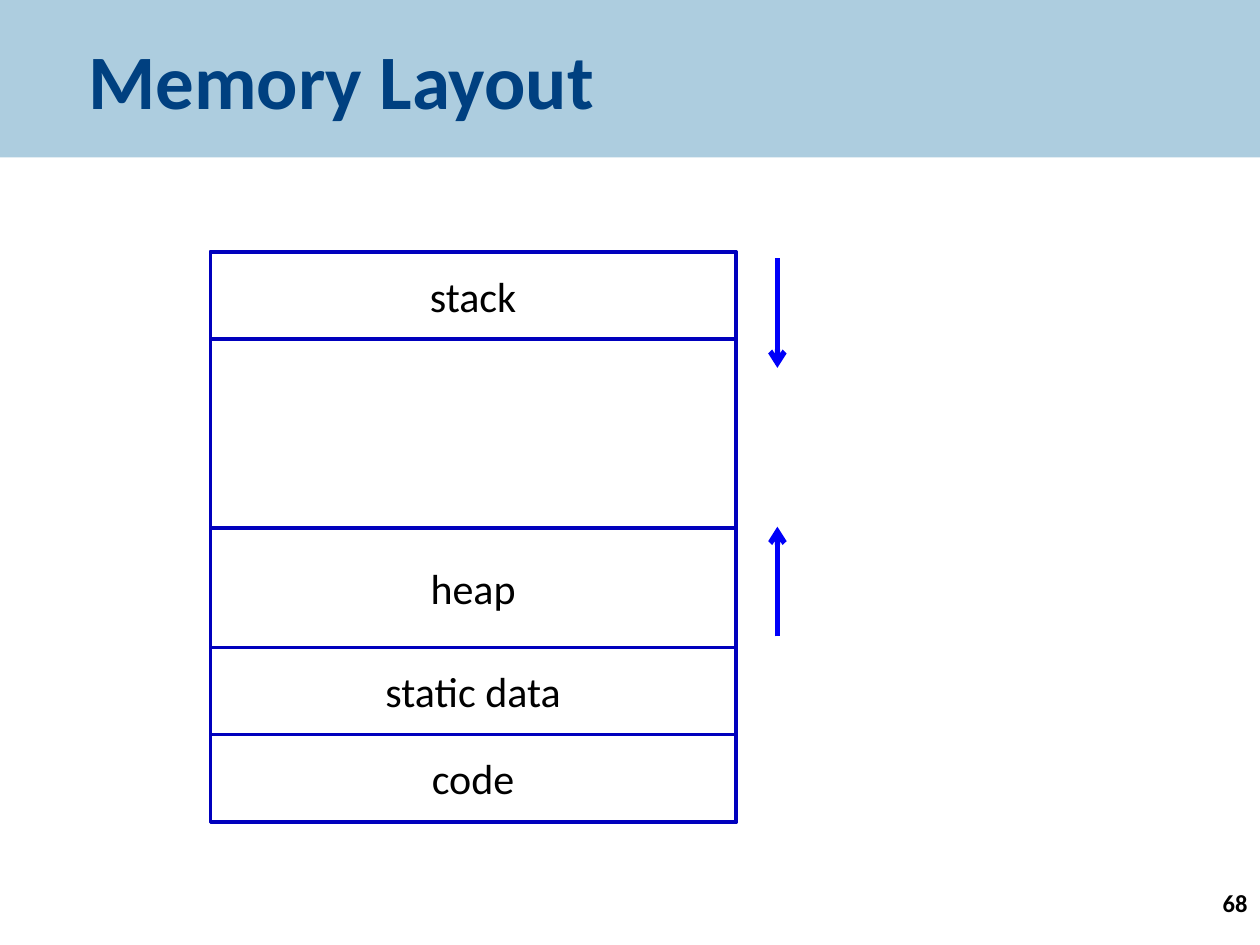
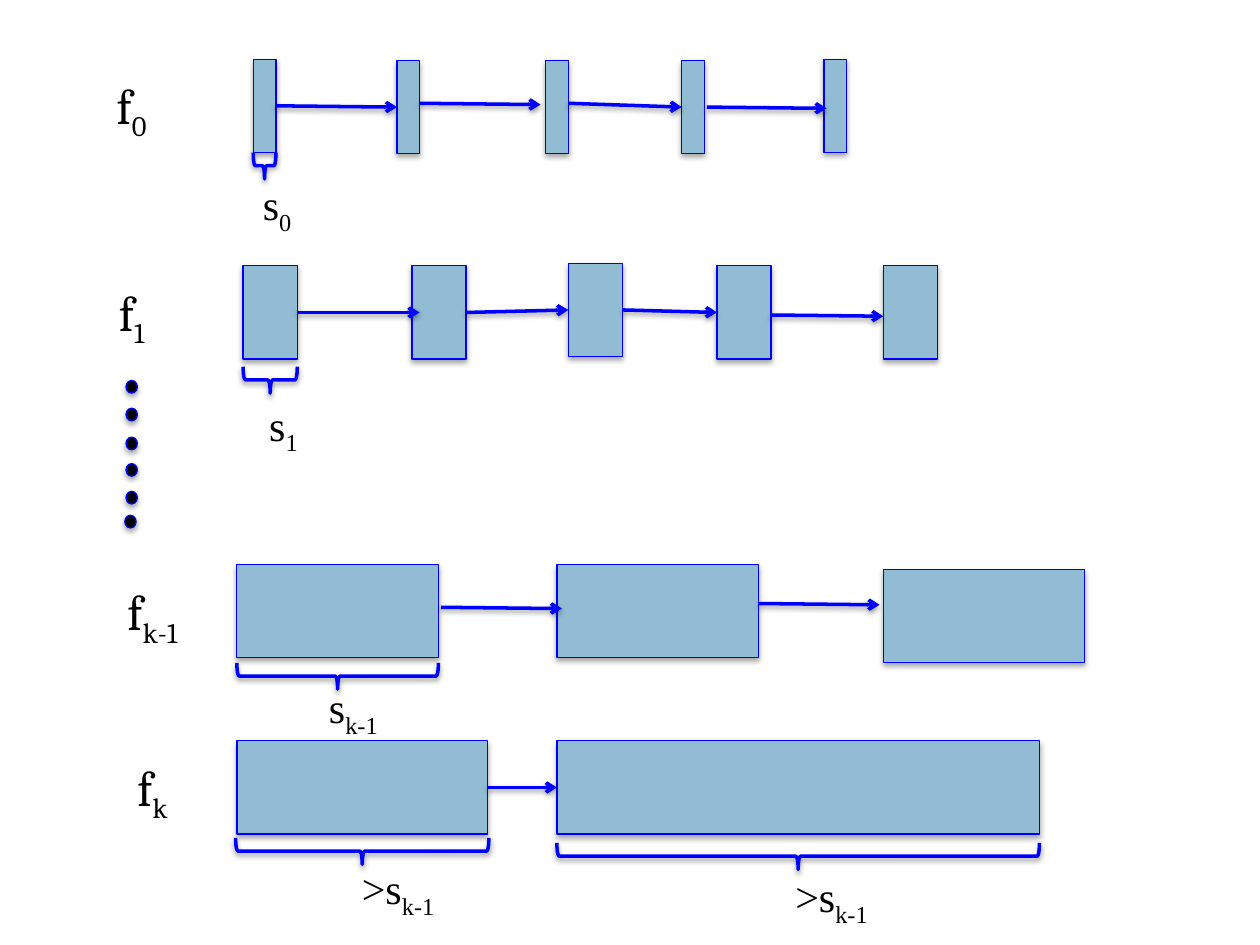
from lxml import etree
from pptx import Presentation
from pptx import util as u
from pptx.dml.color import RGBColor
from pptx.enum import shapes, text
from pptx.oxml.ns import qn

PX = 9144  # 100 px to the inch
FRAME_BLUE = RGBColor(0x00, 0x00, 0xBD)
EDGE_BLUE = RGBColor(0x00, 0x00, 0xF9)
ARROW_BLUE = RGBColor(0x00, 0x00, 0xFF)
BLOCK_BLUE = RGBColor(0x91, 0xBC, 0xD4)
BAND_BLUE = RGBColor(0xAD, 0xCD, 0xDF)
TITLE_BLUE = RGBColor(0x00, 0x40, 0x80)
BLACK = RGBColor(0, 0, 0)
KIND = shapes.MSO_SHAPE


def add_arrow(page, start, end, colour, width):
    arrow = page.shapes.add_connector(
        shapes.MSO_CONNECTOR.STRAIGHT, *[value * PX for value in (*start, *end)])
    arrow.line.color.rgb = colour
    arrow.line.width = u.Pt(width)
    etree.SubElement(arrow.line._get_or_add_ln(), qn("a:tailEnd"), type="arrow")
    etree.SubElement(arrow._element.spPr, qn("a:effectLst"))
    return arrow


def cast_shadow(shape, opacity, distance):
    """Fill the shape's empty effect list with a soft shadow straight below."""
    effects = shape._element.spPr.find(qn("a:effectLst"))
    shadow = etree.SubElement(effects, qn("a:outerShdw"), blurRad="40000",
                              dist=str(distance), dir="5400000", rotWithShape="0")
    colour = etree.SubElement(shadow, qn("a:srgbClr"), val="000000")
    etree.SubElement(colour, qn("a:alpha"), val=str(opacity * 1000))


deck = Presentation()
deck.slide_width = 1000 * PX
deck.slide_height = 750 * PX

# Memory layout
page = deck.slides.add_slide(deck.slide_layouts[5])
title = page.shapes.title
title.left, title.top, title.width, title.height = 0, 0, 1000 * PX, 125 * PX
title.fill.solid()
title.fill.fore_color.rgb = BAND_BLUE
title.text = "Memory Layout"
frame = title.text_frame
frame.auto_size = text.MSO_AUTO_SIZE.NONE
frame.vertical_anchor = text.MSO_ANCHOR.MIDDLE
frame.margin_left = 70 * PX
para = frame.paragraphs[0]
para.alignment = text.PP_ALIGN.LEFT
para.font.name, para.font.size, para.font.bold = "Calibri", u.Pt(44), True
para.font.color.rgb = TITLE_BLUE

for start_y, end_y in ((205, 292), (505, 418)):
    add_arrow(page, (617, start_y), (617, end_y), EDGE_BLUE, 3)

segments = [("", 200, 453), ("heap", 419, 95), ("stack", 200, 69),
            ("code", 583, 69), ("static data", 514, 69)]
for name, top, height in segments:
    box = page.shapes.add_shape(KIND.RECTANGLE, 167 * PX, top * PX, 417 * PX, height * PX)
    box.shadow.inherit = False
    box.fill.background()
    box.line.color.rgb = FRAME_BLUE
    box.line.width = u.Pt(2)
    if name:
        box.text_frame.text = name
        box.text_frame.vertical_anchor = text.MSO_ANCHOR.MIDDLE
        para = box.text_frame.paragraphs[0]
        para.alignment = text.PP_ALIGN.CENTER
        para.font.name, para.font.size = "Calibri", u.Pt(24)
        para.font.color.rgb = BLACK

number = page.shapes.add_textbox(792 * PX, 700 * PX, 208 * PX, 50 * PX)
number.text_frame.word_wrap = True
number.text_frame.text = "68"
para = number.text_frame.paragraphs[0]
para.alignment = text.PP_ALIGN.RIGHT
para.font.name, para.font.size, para.font.bold = "Calibri", u.Pt(14), True
para.font.color.rgb = BLACK

# Chains of blocks f0 to fk
page = deck.slides.add_slide(deck.slide_layouts[6])
BLOCK_HEIGHT = 74
BRACE_DEPTH = 21

# blocks: left, top, width; arrows: start, end, where None joins the block's side
# braces: left, top, width
chains = [
    {"blocks": [(201, 47, 18), (315, 48, 18), (433, 48, 18), (541, 48, 18), (654, 47, 18)],
     "arrows": [(None, None), ((333, 82), (429, 83)), ((451, 82), None),
                ((561, 85), (656, 86))],
     "braces": [(201, 121, 18)]},
    {"blocks": [(193, 211, 43), (327, 211, 43), (451, 209, 43), (569, 211, 43),
                (701, 211, 43)],
     "arrows": [(None, (333, 248)), (None, None), (None, None), ((612, 250), (701, 251))],
     "braces": [(193, 291, 43)]},
    {"blocks": [(188, 448, 160), (442, 448, 160), (701, 452, 160)],
     "arrows": [((350, 482), (446, 483)), ((602, 479), (698, 480))],
     "braces": [(188, 526, 160)]},
    {"blocks": [(188, 588, 199), (442, 588, 383)],
     "arrows": [(None, None)],
     "braces": [(187, 665, 201), (442, 669, 383)]},
]

for chain in chains:
    boxes = []
    for left, top, width in chain["blocks"]:
        box = page.shapes.add_shape(KIND.RECTANGLE, left * PX, top * PX,
                                    width * PX, BLOCK_HEIGHT * PX)
        box.shadow.inherit = False
        box.fill.solid()
        box.fill.fore_color.rgb = BLOCK_BLUE
        box.line.color.rgb = EDGE_BLUE
        box.line.width = u.Pt(0.75)
        cast_shadow(box, 35, 23000)
        boxes.append(box)

    for index, (start, end) in enumerate(chain["arrows"]):
        left, top, width = chain["blocks"][index]
        next_left, next_top, _ = chain["blocks"][index + 1]
        arrow = add_arrow(page, start or (left + width, top + BLOCK_HEIGHT // 2),
                          end or (next_left, next_top + BLOCK_HEIGHT // 2), ARROW_BLUE, 2)
        if start is None:
            arrow.begin_connect(boxes[index], 3)
        if end is None:
            arrow.end_connect(boxes[index + 1], 1)
        cast_shadow(arrow, 38, 20000)

    for left, top, width in chain["braces"]:
        # the frame is given upright, then turned about its centre
        turn = (width - BRACE_DEPTH) * PX // 2
        brace = page.shapes.add_shape(KIND.LEFT_BRACE, left * PX + turn, top * PX - turn,
                                      BRACE_DEPTH * PX, width * PX)
        brace.rotation = 270
        brace.shadow.inherit = False
        brace.fill.background()
        brace.line.color.rgb = ARROW_BLUE
        brace.line.width = u.Pt(2)
        cast_shadow(brace, 38, 20000)

for left, top in ((100, 302), (100, 324), (100, 347), (100, 368), (100, 390), (99, 409)):
    dot = page.shapes.add_shape(KIND.OVAL, left * PX, top * PX, 9 * PX, 10 * PX)
    dot.shadow.inherit = False
    dot.fill.solid()
    dot.fill.fore_color.rgb = BLACK
    dot.line.color.rgb = EDGE_BLUE
    dot.line.width = u.Pt(0.75)
    cast_shadow(dot, 35, 23000)

chain_labels = [("f", "0", 81, 55, 47), ("f", "1", 81, 219, 47),
                ("f", "k-1", 81, 457, 80), ("f", "k", 81, 596, 80)]
size_labels = [("s", "0", 188, 137, 64), ("s", "1", 193, 312, 64), ("s", "k-1", 247, 536, 67),
               (">s", "k-1", 266, 680, 100), (">s", "k-1", 610, 686, 100)]
for labels, font_name, size, height in ((chain_labels, "Cambria", 28, 57),
                                        (size_labels, "Times New Roman", 24, 50)):
    for base, subscript, left, top, width in labels:
        label = page.shapes.add_textbox(left * PX, top * PX, width * PX, height * PX)
        label.text_frame.word_wrap = False
        label.text_frame.auto_size = text.MSO_AUTO_SIZE.SHAPE_TO_FIT_TEXT
        para = label.text_frame.paragraphs[0]
        para.alignment = text.PP_ALIGN.CENTER
        para.font.name, para.font.size = font_name, u.Pt(size)
        para.font.color.rgb = BLACK
        para.add_run().text = base
        span = para.add_run()
        span.text = subscript
        span._r.get_or_add_rPr().set("baseline", "-25000")

deck.save("out.pptx")
